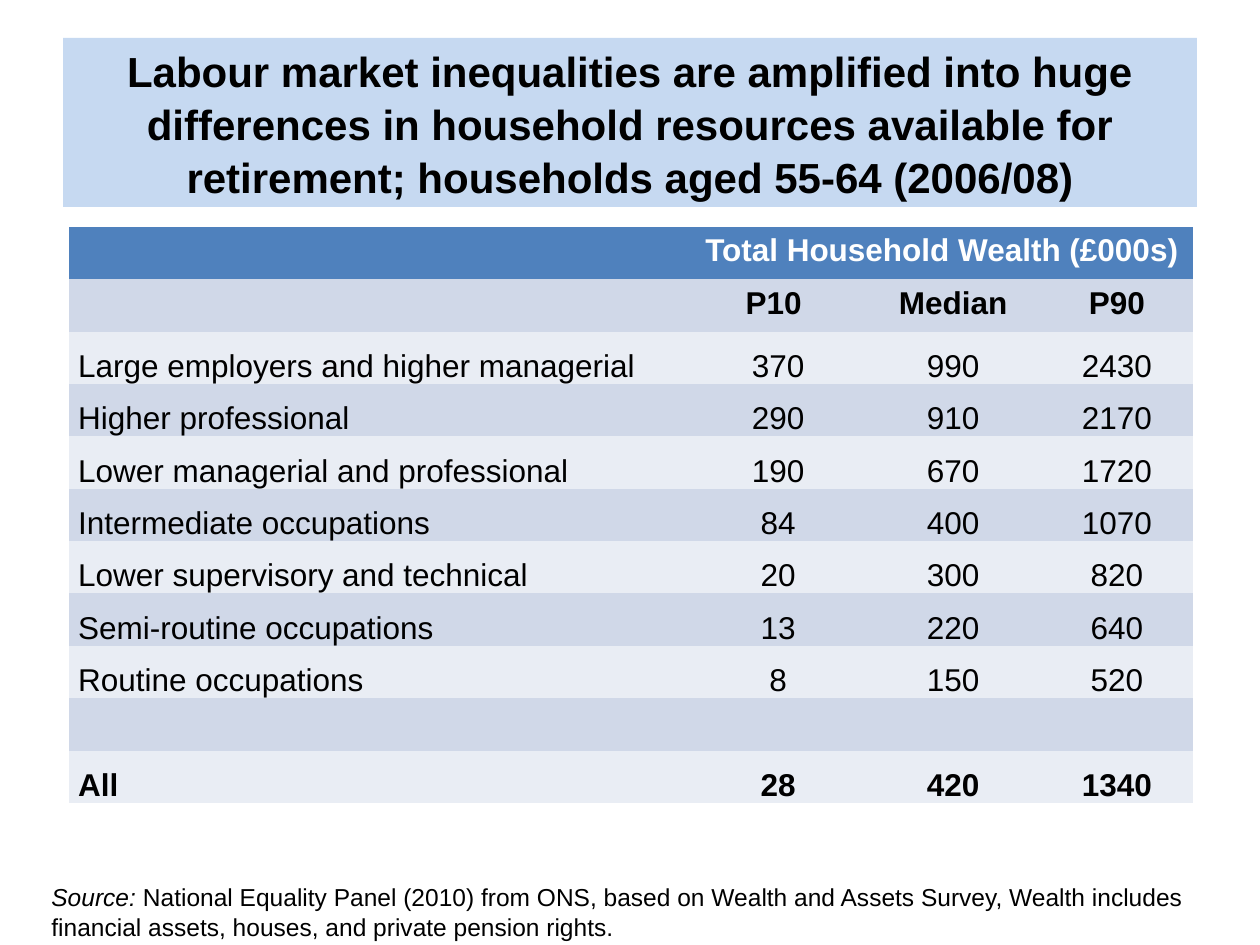
from pptx import Presentation, util as u
from pptx.dml.color import RGBColor
from pptx.enum import text

THEME = {
    "font": "Arial",
    "title": 24, "table": 18, "source": 14,
    "ink": "000000", "paper": "FFFFFF",
    "banner": "C6D9F1", "head": "4F81BD", "bands": ("E9EDF4", "D0D8E8"),
    "table_style": "{2D5ABB26-0587-4C30-8999-92F81FD0307C}",
}
W, H = 10, 7.5
TITLE_BOX = (0.05, 0.04, 0.9, 0.179)
TABLE_BOX = (0.055, 0.24, 0.892, 0.61)
SOURCE_BOX = (0.031, 0.927, 0.953, 0.076)
COLUMNS = (4.93, 1.39, 1.39, 1.21)

TITLE = ("Labour market inequalities are amplified into huge differences in "
         "household resources available for retirement; households aged 55-64 (2006/08)")
ROWS = [
    ("", "Total Household Wealth (£000s)", "", ""),
    ("", "P10 ", "Median", "P90"),
    ("Large employers and higher managerial", "370", "990", "2430"),
    ("Higher professional", "290", "910", "2170"),
    ("Lower managerial and professional", "190", "670", "1720"),
    ("Intermediate occupations", "84", "400", "1070"),
    ("Lower supervisory and technical", "20", "300", "820"),
    ("Semi-routine occupations", "13", "220", "640"),
    ("Routine occupations", "8", "150", "520"),
    ("", "", "", ""),
    ("All", "28", "420", "1340"),
]
SOURCE = [
    ("Source: ", True),
    ("National Equality Panel (2010) from ONS, based on Wealth and Assets Survey, "
     "Wealth includes financial assets, houses, and private pension rights.", False),
]


def apply(obj, values):
    for name, value in values.items():
        setattr(obj, name, value)


def frame(box):
    x, y, w, h = box
    return [u.Inches(v) for v in (x * W, y * H, w * W, h * H)]


def fill(obj, color):
    obj.fill.solid()
    obj.fill.fore_color.rgb = RGBColor.from_string(color)


def style(font, size, color="ink", **values):
    apply(font, {"name": THEME["font"], "size": u.Pt(THEME[size]), **values})
    font.color.rgb = RGBColor.from_string(THEME[color])


def add_title(s, box):
    sp = s.shapes.title
    apply(sp, dict(zip(("left", "top", "width", "height"), frame(box))))
    fill(sp, THEME["banner"])
    tf = sp.text_frame
    apply(tf, {"text": TITLE, "word_wrap": True,
               "auto_size": text.MSO_AUTO_SIZE.NONE,
               "vertical_anchor": text.MSO_ANCHOR.MIDDLE})
    p = tf.paragraphs[0]
    apply(p, {"alignment": text.PP_ALIGN.CENTER, "line_spacing": 1.05})
    style(p.runs[0].font, "title", bold=True)


def fill_cell(cell, value, i, j):
    fill(cell, THEME["bands"][i % 2] if i else THEME["head"])
    if i > 1 and value:
        apply(cell, {"vertical_anchor": text.MSO_ANCHOR.BOTTOM,
                     "margin_left": u.Inches(0.07), "margin_right": u.Inches(0.07),
                     "margin_top": 0, "margin_bottom": 0})
    p = cell.text_frame.paragraphs[0]
    p.alignment = text.PP_ALIGN.CENTER if j else text.PP_ALIGN.LEFT
    if value:
        r = p.add_run()
        r.text = value
        style(r.font, "table", "ink" if i else "paper",
              bold=i < 2 or i == len(ROWS) - 1)


def add_wealth_table(s, box):
    x, y, w, h = frame(box)
    gf = s.shapes.add_table(len(ROWS), len(COLUMNS), x, y, w, h)
    table = gf.table
    gf._element.graphic.graphicData.tbl.tblPr[0].text = THEME["table_style"]
    for col, share in zip(table.columns, COLUMNS):
        col.width = int(w * share / sum(COLUMNS))
    for i, row in enumerate(ROWS):
        table.rows[i].height = h // len(ROWS)
        for j, value in enumerate(row):
            fill_cell(table.cell(i, j), value, i, j)
    table.cell(0, 1).merge(table.cell(0, len(COLUMNS) - 1))


def add_source(s, box):
    tf = s.shapes.add_textbox(*frame(box)).text_frame
    apply(tf, {"word_wrap": True, "auto_size": text.MSO_AUTO_SIZE.SHAPE_TO_FIT_TEXT})
    p = tf.paragraphs[0]
    for value, italic in SOURCE:
        r = p.add_run()
        r.text = value
        style(r.font, "source", italic=italic)


def main():
    prs = Presentation()
    apply(prs, {"slide_width": u.Inches(W), "slide_height": u.Inches(H)})
    s = prs.slides.add_slide(prs.slide_layouts[5])
    add_title(s, TITLE_BOX)
    add_wealth_table(s, TABLE_BOX)
    add_source(s, SOURCE_BOX)
    prs.save("out.pptx")


if __name__ == "__main__":
    main()
